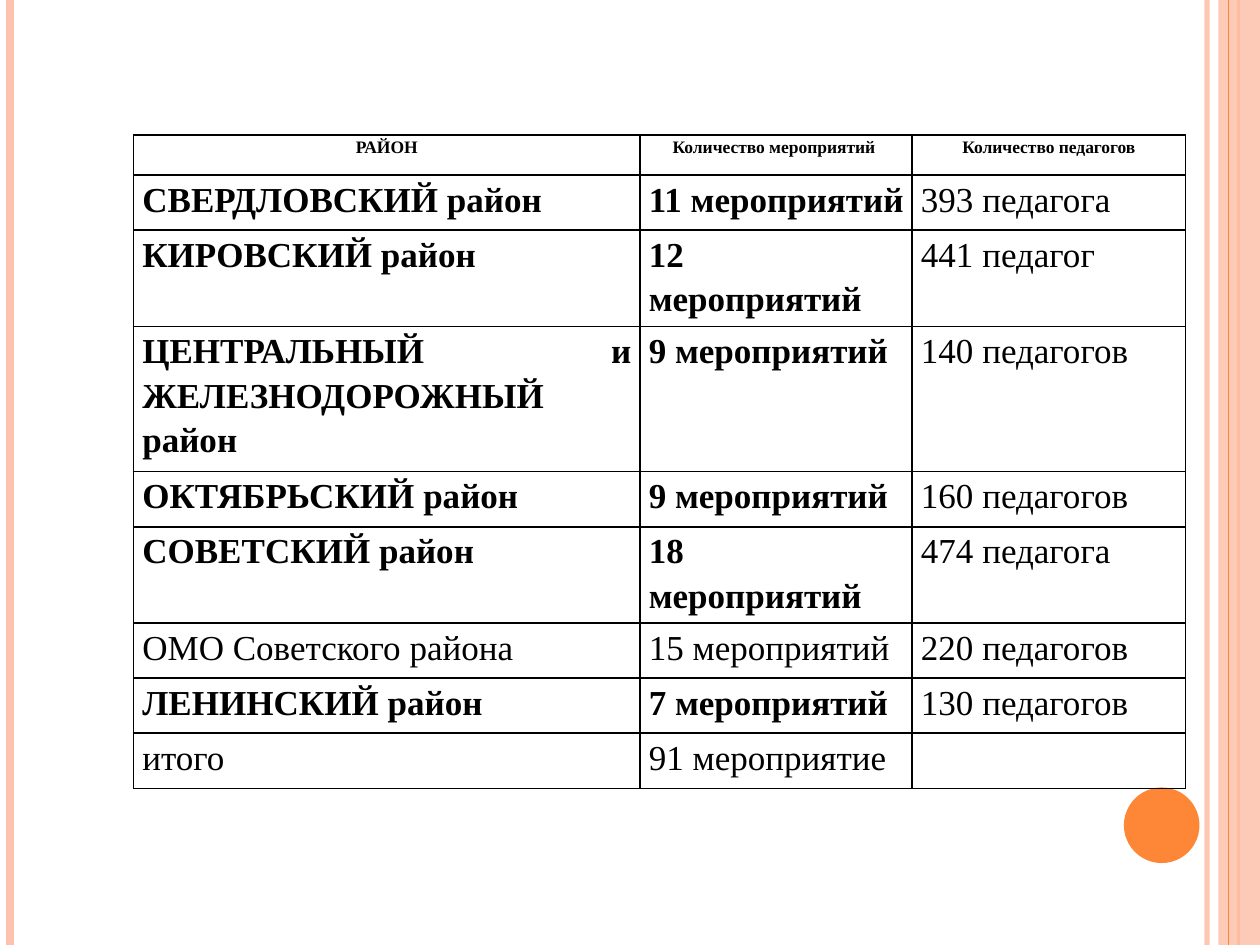
from lxml import etree
from pptx import Presentation
from pptx.dml.color import RGBColor
from pptx.enum.shapes import MSO_CONNECTOR, MSO_SHAPE
from pptx.enum.text import PP_ALIGN
from pptx.oxml.ns import qn
from pptx.util import Inches, Pt

STRAIGHT = MSO_CONNECTOR.STRAIGHT
RECTANGLE, OVAL = MSO_SHAPE.RECTANGLE, MSO_SHAPE.OVAL
CENTER, JUSTIFY = PP_ALIGN.CENTER, PP_ALIGN.JUSTIFY

COLORS = {"peach": "FEC3AE", "orange": "FE8637", "black": "000000"}
FONT = "Times New Roman"
SLIDE_WIDTH, SLIDE_HEIGHT = 10, 7.5

HEADER = ("РАЙОН", "Количество мероприятий ", "Количество педагогов")
# district, events, teachers, bold, number of text lines
DISTRICTS = [
    ("СВЕРДЛОВСКИЙ район ", "11 мероприятий", "393 педагога", True, 1),
    ("КИРОВСКИЙ район ", "12 мероприятий", "441 педагог", True, 2),
    ("ЦЕНТРАЛЬНЫЙ и ЖЕЛЕЗНОДОРОЖНЫЙ  район ", "9 мероприятий", "140 педагогов", True, 3),
    ("ОКТЯБРЬСКИЙ район ", "9 мероприятий", "160 педагогов", True, 1),
    ("СОВЕТСКИЙ район ", "18 мероприятий", "474 педагога", True, 2),
    ("ОМО Советского района", "15 мероприятий ", "220 педагогов", False, 1),
    ("ЛЕНИНСКИЙ район ", "7 мероприятий", "130 педагогов", True, 1),
    ("итого", "91 мероприятие ", "", False, 1),
]
COLUMN_WIDTHS = (4.02, 2.16, 2.17)
HEADER_HEIGHT = Pt(23)
HEIGHT_BY_LINES = {1: Pt(31.5), 2: Pt(55), 3: Pt(83)}
TABLE_LEFT, TABLE_TOP = 1.06, 1.07


def set_alpha(properties, percent):
    color = properties.find(".//" + qn("a:srgbClr"))
    etree.SubElement(color, qn("a:alpha"), val=str(percent * 1000))


def add_stripe(slide, x, color, width, alpha=None):
    """Vertical line over the full slide height."""
    line = slide.shapes.add_connector(
        STRAIGHT, Inches(x), Inches(0), Inches(x), Inches(SLIDE_HEIGHT))
    line.line.color.rgb = RGBColor.from_string(COLORS[color])
    line.line.width = Pt(width)
    properties = line._element.spPr
    if alpha:
        set_alpha(properties, alpha)
    etree.SubElement(properties, qn("a:effectLst"))


def add_block(slide, preset, left, top, width, height, color, alpha=None):
    shape = slide.shapes.add_shape(
        preset, Inches(left), Inches(top), Inches(width), Inches(height))
    shape.shadow.inherit = False
    shape.fill.solid()
    shape.fill.fore_color.rgb = RGBColor.from_string(COLORS[color])
    shape.line.fill.background()
    if alpha:
        set_alpha(shape._element.spPr, alpha)


def write(cell, text, size=20, bold=False, align=JUSTIFY):
    paragraph = cell.text_frame.paragraphs[0]
    paragraph.alignment = align
    paragraph.line_spacing = 1.15
    if text:
        run = paragraph.add_run()
        run.text = text
        run.font.name = FONT
        run.font.size = Pt(size)
        run.font.bold = bold
        run.font.color.rgb = RGBColor.from_string(COLORS["black"])


def style_cell(cell):
    """Clear the fill, set the margins and draw black borders."""
    cell.margin_left = cell.margin_right = Inches(0.07)
    cell.margin_top = cell.margin_bottom = 0
    properties = cell._tc.get_or_add_tcPr()
    for side in ("lnL", "lnR", "lnT", "lnB"):
        border = etree.SubElement(properties, qn(f"a:{side}"), w=str(Pt(1)))
        fill = etree.SubElement(border, qn("a:solidFill"))
        etree.SubElement(fill, qn("a:srgbClr"), val=COLORS["black"])
    cell.fill.background()


def add_district_table(slide):
    heights = [HEADER_HEIGHT] + [HEIGHT_BY_LINES[district[-1]] for district in DISTRICTS]
    table = slide.shapes.add_table(
        len(heights), len(COLUMN_WIDTHS), Inches(TABLE_LEFT), Inches(TABLE_TOP),
        Inches(sum(COLUMN_WIDTHS)), sum(heights)).table
    table.first_row = table.horz_banding = False
    for column, width in zip(table.columns, COLUMN_WIDTHS):
        column.width = Inches(width)
    for row, height in zip(table.rows, heights):
        row.height = height
    for cell in table.iter_cells():
        style_cell(cell)

    for index, title in enumerate(HEADER):
        write(table.cell(0, index), title, size=10, bold=True, align=CENTER)
    for index, (name, events, teachers, bold, _) in enumerate(DISTRICTS, start=1):
        write(table.cell(index, 0), name, bold=bold)
        write(table.cell(index, 1), events, bold=bold)
        write(table.cell(index, 2), teachers)
    # The first event count only just fits on one line
    table.cell(1, 1).margin_right = Inches(0.04)


def main():
    presentation = Presentation()
    presentation.slide_width = Inches(SLIDE_WIDTH)
    presentation.slide_height = Inches(SLIDE_HEIGHT)
    slide = presentation.slides.add_slide(presentation.slide_layouts[6])

    add_stripe(slide, 9.58, "peach", 3, alpha=93)
    add_stripe(slide, 0.08, "peach", 4.5)
    add_stripe(slide, 9.83, "orange", 1.5)
    add_block(slide, RECTANGLE, 9.67, 0, 0.33, SLIDE_HEIGHT, "peach", alpha=87)
    add_stripe(slide, 9.75, "orange", 0.75)
    add_block(slide, OVAL, 8.92, 6.25, 0.6, 0.6, "orange")
    add_district_table(slide)

    presentation.save("out.pptx")


if __name__ == "__main__":
    main()
